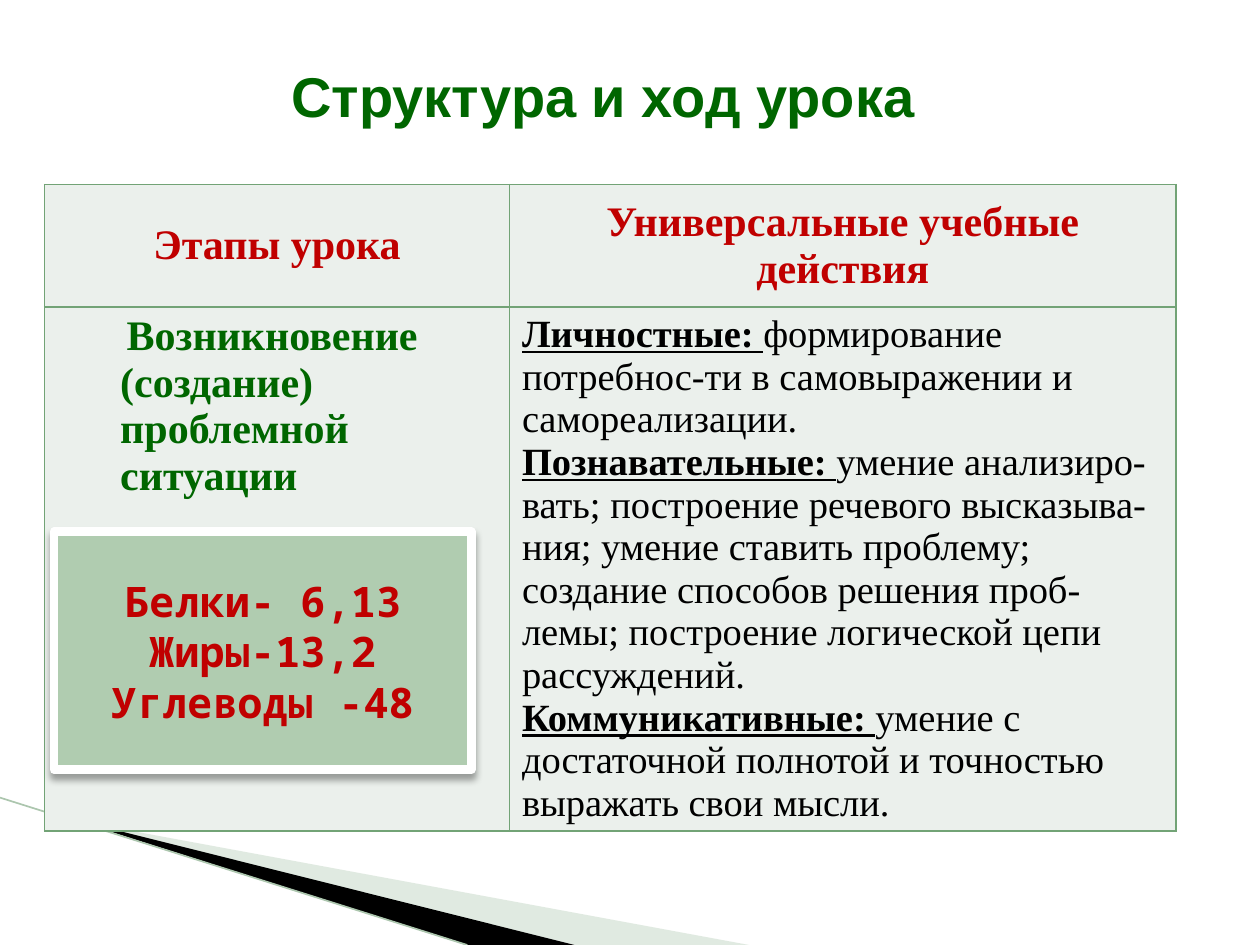
from lxml.etree import SubElement
from pptx import Presentation
from pptx.dml.color import RGBColor
from pptx.enum.shapes import MSO_CONNECTOR, MSO_SHAPE
from pptx.enum.text import MSO_ANCHOR, PP_ALIGN
from pptx.oxml import parse_xml
from pptx.oxml.ns import nsdecls, qn
from pptx.util import Cm, Pt

SERIF, MONO, SANS = "Times New Roman", "Noto Sans Mono", "Arial"
RED, GREEN, BLACK = "C00000", "006600", "000000"

SKILLS = [
    ("Личностные: ", "формирование потребнос-ти в самовыражении и самореализации."),
    ("Познавательные: ", "умение анализиро-вать; построение речевого высказыва-ния; "
     "умение ставить проблему; создание способов решения проб-лемы; "
     "построение логической цепи рассуждений."),
    ("Коммуникативные: ", "умение с достаточной полнотой и точностью выражать свои мысли."),
]
NUTRIENTS = ["Белки- 6,13", "Жиры-13,2", "Углеводы -48"]


def rgb(value):
    return RGBColor.from_string(value)


def add_run(p, text, font=SERIF, size=24, color=BLACK, bold=True, underline=False):
    r = p.add_run()
    r.text = text
    r.font.name, r.font.size = font, Pt(size)
    r.font.bold, r.font.underline = bold, underline
    r.font.color.rgb = rgb(color)


def next_paragraph(tf, index, align=PP_ALIGN.LEFT):
    p = tf.add_paragraph() if index else tf.paragraphs[0]
    p.alignment = align
    return p


def add_wedge(s, points, color, alpha=None):
    start, *rest = [(Cm(x), Cm(y)) for x, y in points]
    builder = s.shapes.build_freeform(*start)
    builder.add_line_segments(rest)
    sp = builder.convert_to_shape()
    sp.shadow.inherit = False
    sp.fill.solid()
    sp.fill.fore_color.rgb = rgb(color)
    sp.line.fill.background()
    if alpha:
        clr = sp.fill._xPr.find(".//" + qn("a:srgbClr"))
        SubElement(clr, qn("a:alpha"), val=str(alpha * 1000))


def add_line(s, x1, y1, x2, y2, color, width):
    cx = s.shapes.add_connector(MSO_CONNECTOR.STRAIGHT, Cm(x1), Cm(y1), Cm(x2), Cm(y2))
    cx.line.color.rgb = rgb(color)
    cx.line.width = Pt(width)
    SubElement(cx._element.spPr, qn("a:effectLst"))


def style_cell(cell, fill, border):
    cell.fill.solid()
    cell.fill.fore_color.rgb = rgb(fill)
    tcPr = cell._tc.get_or_add_tcPr()
    for i, side in enumerate("LRTB"):
        tcPr.insert(i, parse_xml(
            f'<a:ln{side} {nsdecls("a")} w="12700"><a:solidFill>'
            f'<a:srgbClr val="{border}"/></a:solidFill></a:ln{side}>'))


def add_stage_table(s):
    table = s.shapes.add_table(2, 2, Cm(0.9), Cm(3.72), Cm(22.81), Cm(13.03)).table
    table.first_row = table.horz_banding = False
    for column, width in zip(table.columns, (9.37, 13.44)):
        column.width = Cm(width)
    for row, height in zip(table.rows, (2.47, 10.56)):
        row.height = Cm(height)
    for cell in table.iter_cells():
        style_cell(cell, "EBF0EC", "72A376")

    # Header row
    for col, text in enumerate(("Этапы урока", "Универсальные учебные действия")):
        cell = table.cell(0, col)
        cell.vertical_anchor = MSO_ANCHOR.MIDDLE
        add_run(next_paragraph(cell.text_frame, 0, PP_ALIGN.CENTER), text, color=RED)

    # Lesson stage
    p = next_paragraph(table.cell(1, 0).text_frame, 0)
    pPr = p._p.get_or_add_pPr()
    pPr.set("marL", str(Cm(1.27)))
    pPr.set("indent", str(Cm(0.13)))
    add_run(p, "Возникновение (создание) проблемной ситуации", color=GREEN)

    # Learning skills
    tf = table.cell(1, 1).text_frame
    for i, (name, detail) in enumerate(SKILLS):
        p = next_paragraph(tf, i)
        add_run(p, name, size=22, underline=True)
        add_run(p, detail, size=22, bold=False)


def add_title(s, text):
    tf = s.shapes.add_textbox(Cm(1.3), Cm(1.12), Cm(21.41), Cm(1.63)).text_frame
    tf.word_wrap = True
    add_run(next_paragraph(tf, 0, PP_ALIGN.CENTER), text, font=SANS, size=32, color=GREEN)


def add_card(s, lines):
    sp = s.shapes.add_shape(MSO_SHAPE.RECTANGLE, Cm(1.09), Cm(10.72), Cm(8.41), Cm(4.8))
    sp.fill.solid()
    sp.fill.fore_color.rgb = rgb("B0CCB0")
    sp.line.color.rgb = rgb("FFFFFF")
    sp.line.width = Pt(5)
    sp.shadow.inherit = False
    shadow = SubElement(sp._element.spPr.find(qn("a:effectLst")), qn("a:outerShdw"),
                        blurRad=str(Pt(4)), dist=str(Pt(3)), dir="5400000", rotWithShape="0")
    clr = SubElement(shadow, qn("a:srgbClr"), val=BLACK)
    SubElement(clr, qn("a:alpha"), val="35000")
    tf = sp.text_frame
    tf.word_wrap = True
    tf.vertical_anchor = MSO_ANCHOR.MIDDLE
    for i, line in enumerate(lines):
        add_run(next_paragraph(tf, i, PP_ALIGN.CENTER), line, font=MONO, color=RED)


def main():
    prs = Presentation()
    prs.slide_width, prs.slide_height = Cm(25.4), Cm(19.05)
    s = prs.slides.add_slide(prs.slide_layouts[6])

    # Corner decoration
    add_wedge(s, [(1.4, 16.52), (15.1, 19.05), (11.58, 19.05)], "B3CBB5", alpha=40)
    add_wedge(s, [(1.36, 16.49), (11.58, 19.05), (9.4, 19.05)], BLACK)
    add_line(s, 0, 16.08, 9.42, 19.05, "ACC6AE", 0.95)

    # Content
    add_stage_table(s)
    add_title(s, " Структура и ход урока")
    add_card(s, NUTRIENTS)
    prs.save("out.pptx")


if __name__ == "__main__":
    main()
